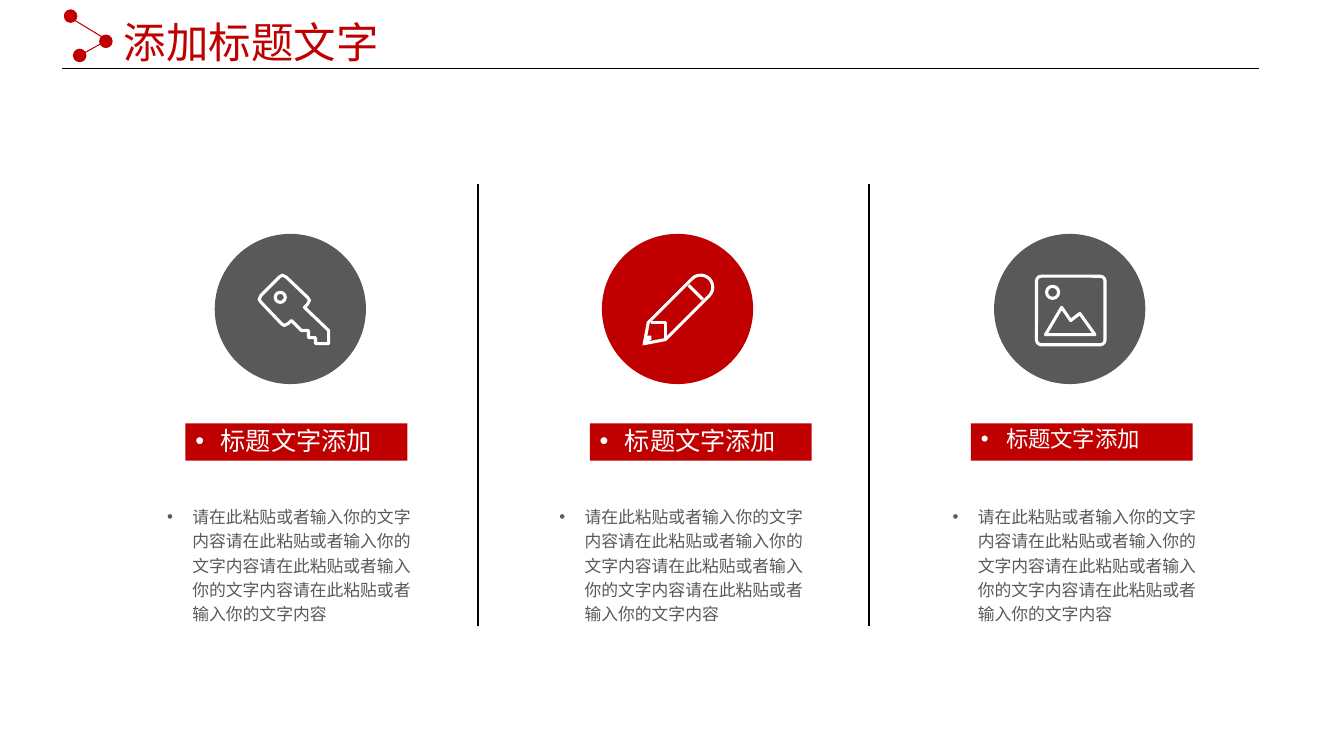
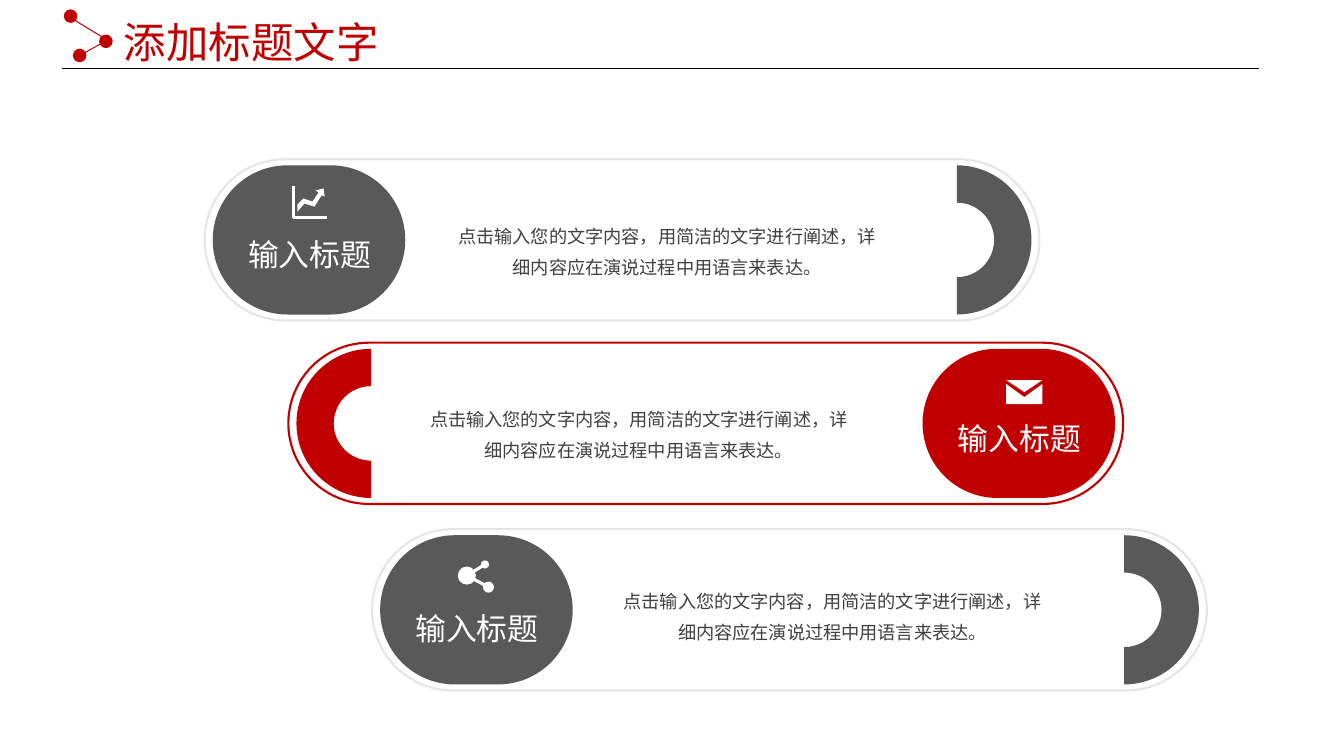
from math import cos, sin, radians
from lxml.etree import SubElement as Sub
from pptx import Presentation
from pptx.dml.color import RGBColor as Rgb
from pptx.enum.shapes import MSO_CONNECTOR as Conn, MSO_SHAPE as Form
from pptx.enum.text import MSO_ANCHOR as Anchor, PP_ALIGN as Align
from pptx.oxml.ns import qn
from pptx.util import Inches, Pt


# Theme: colours, font, type sizes, line widths
class Theme:
    red, gray, pale = "C00000", "595959", "E7E6E6"
    white, black, dark = "FFFFFF", "000000", "404040"
    font = "Noto Sans CJK SC"
    title, label, head, body, note = 30.3, 22, 18, 12, 13
    pen, thin = 2.2, 0.75


# Content
TITLE = "添加标题文字"
HEAD = "标题文字添加"
BODY = "请在此粘贴或者输入你的文字内容" * 4
LABEL = "输入标题"
NOTE = "点击输入您的文字内容，用简洁的文字进行阐述，详细内容应在演说过程中用语言来表达。"


def arc(x, y, r, start, end, step=15):
    return [(x + r * cos(radians(a)), y + r * sin(radians(a)))
            for a in range(start, end + 1, step)]


# Icons: parts in inches from the icon's own corner
ICONS = {
    "key": [
        ("loop", [(.7, .56), (.46, .33), (.49, .3), (.51, .26), (.49, .23),
                  (.28, .03), (.24, .01), (.21, .03), (.03, .21), (.01, .25),
                  (.03, .28), (.23, .49), (.26, .51), (.3, .49), (.33, .46),
                  (.43, .56), (.5, .56), (.5, .63), (.57, .63), (.57, .69),
                  (.7, .69)]),
        ("ring", (.17, .18, .1, .1))],
    "pencil": [
        ("loop", [(.06, .48)] + arc(.58, .13, .12, -135, 45)
         + [(.23, .65), (.02, .69)]),
        ("open", [(.46, .11), (.6, .25)]),
        ("open", [(.09, .48), (.23, .48), (.23, .64)]),
        ("solid", [(.05, .61), (.09, .61), (.09, .65), (0, .71)])],
    "photo": [
        ("frame", (.02, .02, .68, .68)),
        ("ring", (.12, .12, .12, .12)),
        ("loop", [(.11, .6), (.27, .33), (.36, .46), (.45, .39), (.6, .6)])],
    "chart": [
        ("open", [(.01, .01), (.01, .32), (.34, .32)]),
        ("solid", [(.31, .03), (.32, .11), (.29, .1), (.22, .21), (.12, .18),
                   (.05, .26), (.05, .19), (.11, .13), (.2, .16), (.26, .07),
                   (.23, .05)])],
    "mail": [
        ("solid", [(0, 0), (.36, 0), (.18, .12)]),
        ("solid", [(0, .04), (.18, .17), (.36, .04), (.36, .24), (0, .24)])],
    "share": [
        ("dot", (0, .06, .18, .18)),
        ("dot", (.23, 0, .08, .08)),
        ("dot", (.25, .21, .11, .11)),
        ("open", [(.27, .04), (.09, .15), (.3, .26)])],
}

# Columns: icon, fill, disc left, icon left, banner left, body left, head size
COLS = [("key", Theme.gray, 2.13, 2.56, 1.84, 1.56, Theme.head),
        ("pencil", Theme.red, 5.97, 6.37, 5.85, 5.45, Theme.head),
        ("photo", Theme.gray, 9.86, 10.26, 9.63, 9.35, 16)]

# Bars: icon, fill, edge, top, icon place, note place, label top, mirrored
BARS = [
    ("chart", Theme.gray, Theme.pale, 1.58, (2.9, 1.84), (4.49, 2.15), 2.34, False),
    ("mail", Theme.red, Theme.red, 3.4, (9.98, 3.77), (4.21, 3.96), 4.16, True),
    ("share", Theme.gray, Theme.pale, 5.25, (4.54, 5.56), (6.13, 5.77), 6.05, False)]


def paint(shape, fill=None, line=None, width=1):
    shape.shadow.inherit = False
    if fill:
        shape.fill.solid()
        shape.fill.fore_color.rgb = Rgb.from_string(fill)
    else:
        shape.fill.background()
    if line:
        shape.line.color.rgb = Rgb.from_string(line)
        shape.line.width = Pt(width)
    else:
        shape.line.fill.background()
    return shape


def block(slide, form, box, **look):
    return paint(slide.shapes.add_shape(form, *map(Inches, box)), **look)


def rule(slide, start, end, color=Theme.black, width=1):
    line = slide.shapes.add_connector(
        Conn.STRAIGHT, *map(Inches, start + end))
    line.line.color.rgb = Rgb.from_string(color)
    line.line.width = Pt(width)
    Sub(line._element.spPr, qn("a:effectLst"))


def write(slide, box, text, size, color, fill=None, align=Align.LEFT,
          space=None, bullet=False, inset=None):
    if fill:
        shape = block(slide, Form.RECTANGLE, box, fill=fill)
    else:
        shape = slide.shapes.add_textbox(*map(Inches, box))
    frame = shape.text_frame
    frame.word_wrap = True
    frame.vertical_anchor = Anchor.TOP
    if inset is not None:
        frame.margin_left = frame.margin_right = Inches(inset)
        frame.margin_top = frame.margin_bottom = Inches(inset)
    para = frame.paragraphs[0]
    para.alignment = align
    if space:
        para.line_spacing = space
    if bullet:
        props = para._p.get_or_add_pPr()
        props.set("marL", str(Inches(.25)))
        props.set("indent", str(-Inches(.25)))
        Sub(props, qn("a:buFont")).set("typeface", "Arial")
        Sub(props, qn("a:buChar")).set("char", "•")
    run = para.add_run()
    run.text = text
    run.font.size = Pt(size)
    run.font.color.rgb = Rgb.from_string(color)
    run.font.name = Theme.font
    Sub(run._r.get_or_add_rPr(), qn("a:ea")).set("typeface", Theme.font)


def icon(slide, name, left, top):
    stroke = dict(line=Theme.white, width=Theme.pen)
    solid = dict(fill=Theme.white)
    for kind, data in ICONS[name]:
        look = solid if kind in ("solid", "dot") else stroke
        if kind in ("ring", "dot", "frame"):
            x, y, wide, high = data
            form = Form.ROUNDED_RECTANGLE if kind == "frame" else Form.OVAL
            part = block(slide, form, (left + x, top + y, wide, high), **look)
            if kind == "frame":
                part.adjustments[0] = .07
        else:
            pts = [(x * 1000, y * 1000) for x, y in data]
            pen = slide.shapes.build_freeform(*pts[0], scale=Inches(.001))
            pen.add_line_segments(pts[1:], close=kind != "open")
            paint(pen.convert_to_shape(Inches(left), Inches(top)), **look)


def page(deck):
    slide = deck.slides.add_slide(deck.slide_layouts[6])
    rule(slide, (.62, .68), (12.49, .68), width=.5)
    for x, y in [(.64, .1), (.73, .49), (.99, .35)]:
        block(slide, Form.OVAL, (x, y, .12, .12), fill=Theme.red, line=Theme.red)
    for start, end in [((.64, .14), (1.1, .42)), ((.74, .58), (1.06, .4))]:
        rule(slide, start, end, Theme.red, Theme.thin)
    write(slide, (1.13, .01, 3, .71), TITLE, Theme.title, Theme.red, space=1.2)
    return slide


def columns(deck):
    slide = page(deck)
    for x in (4.74, 8.62):
        rule(slide, (x, 1.83), (x, 6.21))
    for name, fill, disc, mark, tab, text, size in COLS:
        block(slide, Form.OVAL, (disc, 2.32, 1.5, 1.49), fill=fill)
        icon(slide, name, mark, 2.72)
        write(slide, (tab, 4.2, 2.2, .37), HEAD, size, Theme.white,
              fill=Theme.red, space=.9, bullet=True)
        write(slide, (text, 4.94, 2.76, .62), BODY, Theme.body, Theme.gray,
              space=1.2, bullet=True)


def bars(deck):
    slide = page(deck)
    wide, cap, ring, gap = 8.28, 1.91, 1.48, .08
    for i, (name, fill, edge, top, mark, note, head, flip) in enumerate(BARS):
        left = 2.03 + .83 * i
        near, far = left + gap, left + wide - gap
        lid, bow = (far - cap, near) if flip else (near, far - ring)
        pill = block(slide, Form.ROUNDED_RECTANGLE, (left, top, wide, 1.6),
                     line=edge, width=1.5)
        plug = block(slide, Form.ROUNDED_RECTANGLE,
                     (lid, top + .06, cap, ring), fill=fill)
        for part in (pill, plug):
            part.adjustments[0] = .5
        half = block(slide, Form.BLOCK_ARC, (bow, top + .06, ring, ring), fill=fill)
        half.rotation = 270 if flip else 90
        icon(slide, name, *mark)
        write(slide, (*note, 4.25, .62), NOTE, Theme.note, Theme.dark,
              align=Align.CENTER, space=Pt(22), inset=0)
        write(slide, (lid + .29, head, 1.34, .37), LABEL, Theme.label,
              Theme.white, align=Align.CENTER, inset=0)


def main():
    deck = Presentation()
    deck.slide_width, deck.slide_height = Inches(13.33), Inches(7.5)
    columns(deck)
    bars(deck)
    deck.save("out.pptx")


if __name__ == "__main__":
    main()
